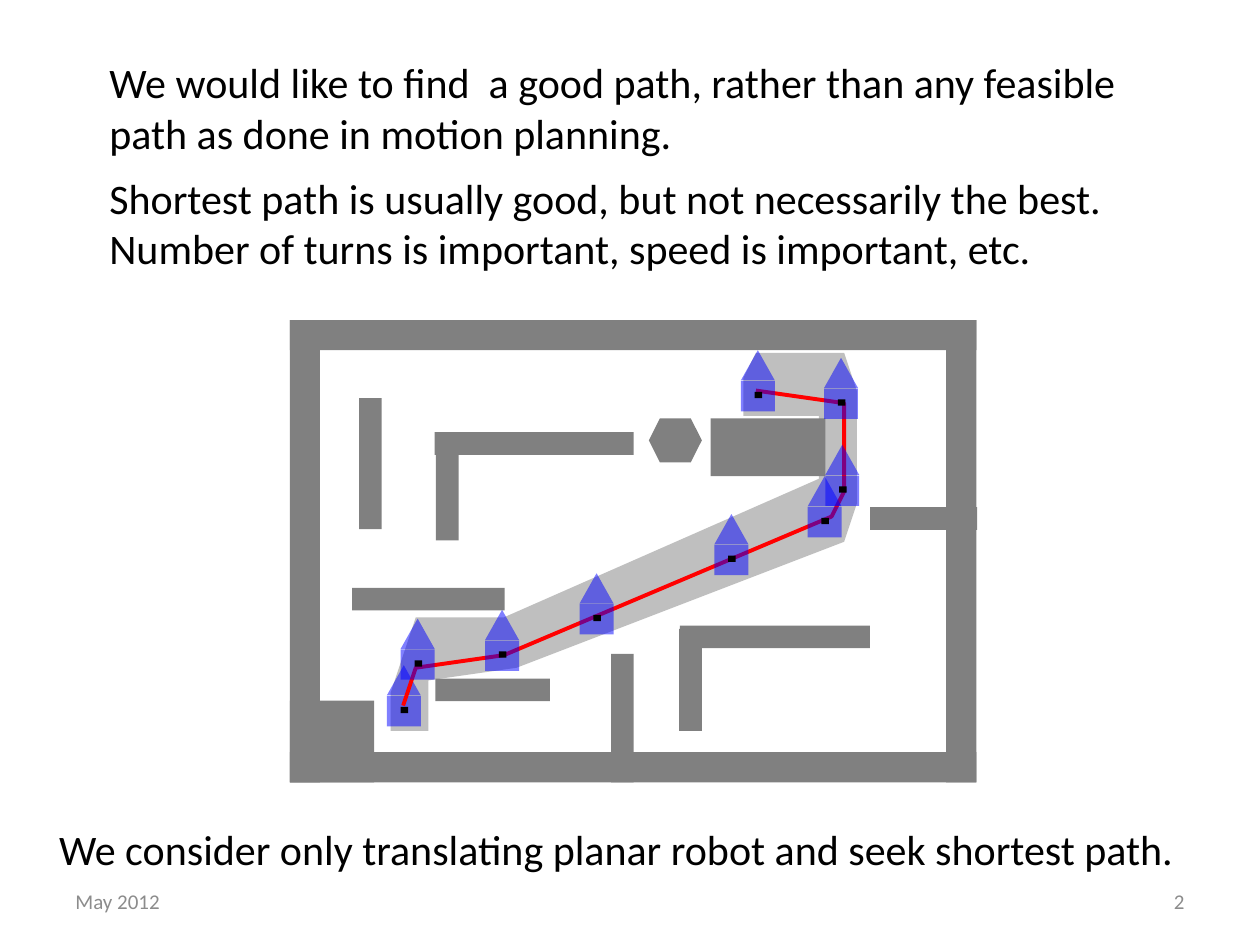
from typing import NamedTuple

from lxml.etree import SubElement
from pptx import Presentation
from pptx.dml.color import RGBColor
from pptx.enum.shapes import MSO_SHAPE as Shape
from pptx.enum.text import MSO_ANCHOR as Anchor, MSO_AUTO_SIZE as AutoSize, PP_ALIGN as Align
from pptx.oxml.ns import qn
from pptx.util import Inches, Pt

# The slide is a grid of 100 columns by 75 rows of square cells
COLUMNS, ROWS = 100, 75
CELL = Inches(0.1)

GRAY = RGBColor(0x80, 0x80, 0x80)
BLUE = RGBColor(0x00, 0x00, 0xFF)
RED = RGBColor(0xFF, 0x00, 0x00)
BLACK = RGBColor(0x00, 0x00, 0x00)
FOOTER_GRAY = RGBColor(0x8C, 0x8C, 0x8C)
FONT = "Calibri"

THICK, THIN = 2.4, 1.8  # outer and inner wall thickness
ROOM_LEFT, ROOM_TOP, ROOM_WIDTH, ROOM_HEIGHT = 23, 25.4, 54.5, 36.7
ROBOT_WIDTH, ROBOT_HALF, HALF_STEP = 2.7, 2.4, 2.45
MARK_WIDTH, MARK_HEIGHT = 0.6, 0.5


class Area(NamedTuple):
    column: float
    row: float
    width: float
    height: float

    def lengths(self) -> list[int]:
        return [round(value * CELL) for value in self]


class Point(NamedTuple):
    column: float
    row: float


class Caption(NamedTuple):
    text: str
    area: Area
    size: int = 24
    color: RGBColor = BLACK
    align: Align = Align.LEFT
    is_footer: bool = False


WALLS = [
    # Outer walls
    Area(ROOM_LEFT, ROOM_TOP, ROOM_WIDTH, THICK),
    Area(ROOM_LEFT, ROOM_TOP + ROOM_HEIGHT - THICK, ROOM_WIDTH, THICK),
    Area(ROOM_LEFT + ROOM_WIDTH - THICK, ROOM_TOP, THICK, ROOM_HEIGHT),
    Area(ROOM_LEFT, ROOM_TOP, THICK, ROOM_HEIGHT),
    Area(ROOM_LEFT, 55.6, 6.7, 6.5),
    # Horizontal inner walls
    Area(34.5, 34.3, 15.8, THIN),
    Area(53.95, 49.65, 15.1, THIN),
    Area(27.95, 46.65, 12.1, THIN),
    Area(34.55, 53.85, 9.1, THIN),
    Area(69.05, 40.25, 8.5, THIN),
    # Vertical inner walls
    Area(28.5, 31.6, THIN, 10.4),
    Area(34.6, 34.3, THIN, 8.6),
    Area(53.9, 49.9, THIN, 8.1),
    Area(48.5, 51.9, THIN, 10.2),
    # Solid block
    Area(56.4, 33.2, 9.1, 4.6),
]
HEXAGON = Area(51.5, 33.2, 4.2, 3.5)

SWEPT_OUTLINE = [
    Point(33.5, 57.5), Point(34.5, 53.9), Point(41.2, 53.3), Point(66.9, 42.7),
    Point(68.2, 40), Point(68.1, 30.8), Point(66.8, 28.5), Point(60.1, 27.9),
    Point(58.9, 30.4), Point(58.9, 32.7), Point(65.4, 33.1), Point(65.4, 37.9),
    Point(39.9, 48.6), Point(33.1, 49.2), Point(31.7, 51.6), Point(30.8, 55.4),
    Point(30.8, 57.5),
]
ROUTE = [
    Point(32.1, 56.35), Point(33.2, 52.6), Point(39.9, 51.9), Point(65.5, 41.4),
    Point(67, 38.9), Point(67, 32), Point(60.2, 31.3),
]

# Top left corner of each robot; the starting one lies under the route
START = Point(30.7, 52.8)
STOPS = [
    Point(38.5, 48.4), Point(31.8, 49.1), Point(64.1, 37.8), Point(65.5, 35.3),
    Point(65.4, 28.4), Point(58.8, 27.8), Point(46, 45.5), Point(56.7, 40.8),
]

CAPTIONS = [
    Caption("We would like to find  a good path, rather than any feasible path "
            "as done in motion planning.", Area(7.7, 4, 85.6, 9.1)),
    Caption("Shortest path is usually good, but not necessarily the best. "
            "Number of turns is important, speed is important, etc.",
            Area(7.7, 13.2, 85.6, 9.1)),
    Caption("We consider only translating planar robot and seek shortest path.",
            Area(3.7, 64.9, 91.5, 5)),
    Caption("May 2012", Area(5, 69.5, 23.3, 4), 12, FOOTER_GRAY, is_footer=True),
    Caption("2", Area(71.7, 69.5, 23.3, 4), 12, FOOTER_GRAY, Align.RIGHT, True),
]


def paint(shape, color: RGBColor, opacity: int = 100) -> None:
    """Give a shape a flat fill, no outline and no shadow."""
    shape.shadow.inherit = False
    shape.fill.solid()
    shape.fill.fore_color.rgb = color
    shape.line.fill.background()
    if opacity < 100:
        color_node = shape._element.spPr.find(qn("a:solidFill"))[0]
        SubElement(color_node, qn("a:alpha"), val=str(opacity * 1000))


def draw_shape(shapes, kind: Shape, area: Area, color: RGBColor, opacity: int = 100) -> None:
    paint(shapes.add_shape(kind, *area.lengths()), color, opacity)


def draw_outline(shapes, points: list[Point], close: bool):
    builder = shapes.build_freeform(*points[0], scale=CELL)
    builder.add_line_segments(points[1:], close=close)
    return builder.convert_to_shape()


def draw_route(shapes) -> None:
    route = draw_outline(shapes, ROUTE, close=False)
    route.shadow.inherit = False
    route.fill.background()
    route.line.color.rgb = RED
    route.line.width = Pt(2.25)


def draw_robot(shapes, corner: Point) -> None:
    column, row = corner
    body = Area(column, row + HALF_STEP, ROBOT_WIDTH, ROBOT_HALF)
    roof = Area(column, row, ROBOT_WIDTH, ROBOT_HALF)
    mark = Area(column + 1.1, row + 3.3, MARK_WIDTH, MARK_HEIGHT)
    draw_shape(shapes, Shape.RECTANGLE, body, BLUE, 50)
    draw_shape(shapes, Shape.ISOSCELES_TRIANGLE, roof, BLUE, 50)
    draw_shape(shapes, Shape.RECTANGLE, mark, BLACK)


def draw_caption(shapes, caption: Caption) -> None:
    frame = shapes.add_textbox(*caption.area.lengths()).text_frame
    frame.text = caption.text
    frame.word_wrap = True
    if caption.is_footer:
        frame.vertical_anchor = Anchor.MIDDLE
    else:
        frame.auto_size = AutoSize.SHAPE_TO_FIT_TEXT
    para = frame.paragraphs[0]
    para.alignment = caption.align
    font = para.runs[0].font
    font.name, font.size = FONT, Pt(caption.size)
    font.color.rgb = caption.color


def main() -> None:
    deck = Presentation()
    deck.slide_width, deck.slide_height = COLUMNS * CELL, ROWS * CELL
    page = deck.slides.add_slide(deck.slide_layouts[6])

    # Floor plan: swept area, walls, obstacles
    plan = page.shapes.add_group_shape().shapes
    paint(draw_outline(plan, SWEPT_OUTLINE, close=True), GRAY, 50)
    for wall in WALLS:
        draw_shape(plan, Shape.RECTANGLE, wall, GRAY)
    draw_shape(plan, Shape.HEXAGON, HEXAGON, GRAY)

    # Robot positions along the route
    draw_robot(plan, START)
    draw_route(plan)
    for stop in STOPS:
        draw_robot(plan, stop)

    # Text and footer
    for caption in CAPTIONS:
        draw_caption(page.shapes, caption)

    deck.save("out.pptx")


if __name__ == "__main__":
    main()
